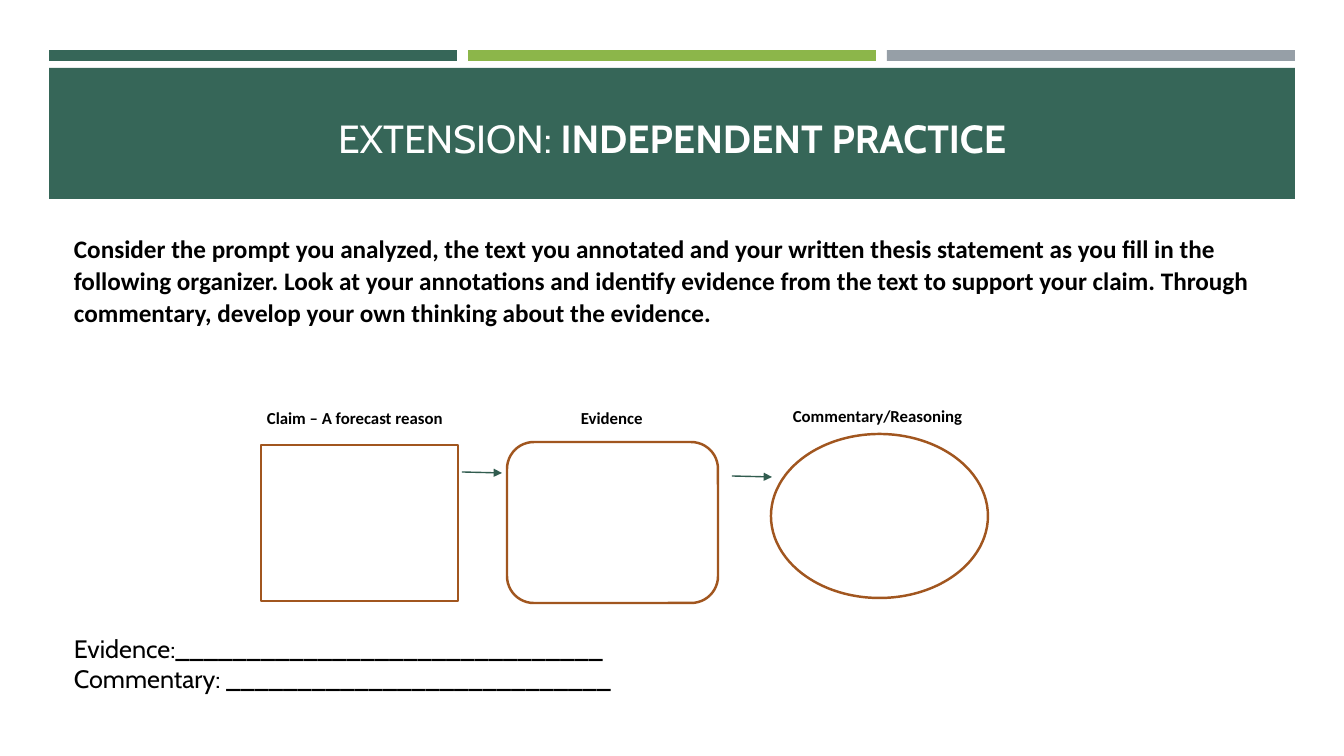
import pptx
import pptx.util
import pptx.dml.color
import pptx.enum.shapes
import pptx.enum.text
import pptx.oxml
import pptx.oxml.ns

Pt = pptx.util.Pt
Shape = pptx.enum.shapes.MSO_SHAPE
Align = pptx.enum.text.PP_ALIGN
Anchor = pptx.enum.text.MSO_ANCHOR
SCALE = 914400 / 100.8  # EMU per px
COLORS = {
    "green": "366658", "lime": "8CB64A", "gray": "969FA7", "white": "FFFFFF",
    "brown": "A1561F", "arrow": "315C4F", "black": "000000",
}

deck = pptx.Presentation()
deck.slide_width = round(1344 * SCALE)
deck.slide_height = round(756 * SCALE)
slide = deck.slides.add_slide(deck.slide_layouts[6])


def place(kind, box, fill, line=None):
    """Add a filled preset shape, outlined if a line colour is given."""
    shape = slide.shapes.add_shape(kind, *[round(v * SCALE) for v in box])
    shape.shadow.inherit = False
    shape.fill.solid()
    shape.fill.fore_color.rgb = pptx.dml.color.RGBColor.from_string(COLORS[fill])
    if line:
        shape.line.color.rgb = pptx.dml.color.RGBColor.from_string(COLORS[line])
        shape.line.width = Pt(1.75)
    else:
        shape.line.fill.background()


def write(box, lines, size, color="black"):
    """Add a text box; lines holds one list of (text, font, bold) per paragraph."""
    frame = slide.shapes.add_textbox(*[round(v * SCALE) for v in box]).text_frame
    frame.word_wrap = True
    for i, runs in enumerate(lines):
        para = frame.paragraphs[0] if i == 0 else frame.add_paragraph()
        for text, font, bold in runs:
            run = para.add_run()
            run.text = text
            run.font.name = font
            run.font.size = Pt(size)
            run.font.bold = bold
            run.font.color.rgb = pptx.dml.color.RGBColor.from_string(COLORS[color])
    return frame


# Header
for i, color in enumerate(["green", "lime", "gray"]):
    place(Shape.RECTANGLE, (49 + 419 * i, 50, 408, 11), color)
place(Shape.RECTANGLE, (49, 68, 1246, 131), "green")
title = write((64, 54, 1216, 112), [
    [("EXTENSION: ", "Cabin", False), ("INDEPENDENT PRACTICE", "Cabin", True)],
], 28, "white")
title.vertical_anchor = Anchor.BOTTOM
title.paragraphs[0].alignment = Align.CENTER

# Prompt and answer lines
body = write((64, 226, 1200, 508), [
    [("Consider the prompt you analyzed, the text you annotated and your written "
      "thesis statement as you fill in the following organizer. Look at your "
      "annotations and identify evidence from the text to support your claim. "
      "Through commentary, develop your own thinking about the evidence.",
      "Calibri", True)],
    [("Evidence:" + "_" * 30, "Cabin", False)],
    [("Commentary: " + "_" * 27, "Cabin", False)],
], 18)
prompt, answer = body.paragraphs[:2]
prompt.line_spacing = 1.07
prompt.space_after = Pt(8)
answer.space_before = Pt(210)

# Organizer
steps = [
    (Shape.RECTANGLE, (261, 445, 197, 156), "Claim – A forecast reason", (257, 403)),
    (Shape.ROUNDED_RECTANGLE, (507, 442, 211, 161), "Evidence", (571, 403)),
    (Shape.OVAL, (771, 434, 217, 164), "Commentary/Reasoning", (783, 401)),
]
for kind, box, label, spot in steps:
    place(kind, box, "white", "brown")
    write((*spot, 224, 30), [[(label, "Calibri", True)]], 12)

for left, top in [(462, 472), (732, 476)]:
    ends = [round(v * SCALE) for v in (left, top, left + 40, top + 1)]
    arrow = slide.shapes.add_connector(
        pptx.enum.shapes.MSO_CONNECTOR.STRAIGHT, *ends)
    arrow.line.color.rgb = pptx.dml.color.RGBColor.from_string(COLORS["arrow"])
    arrow.line.width = Pt(1)
    head = pptx.oxml.parse_xml(
        "<a:tailEnd %s type='triangle'/>" % pptx.oxml.ns.nsdecls("a"))
    arrow.line._get_or_add_ln().append(head)
    arrow._element.spPr.append(pptx.oxml.parse_xml(
        "<a:effectLst %s/>" % pptx.oxml.ns.nsdecls("a")))

deck.save("out.pptx")
